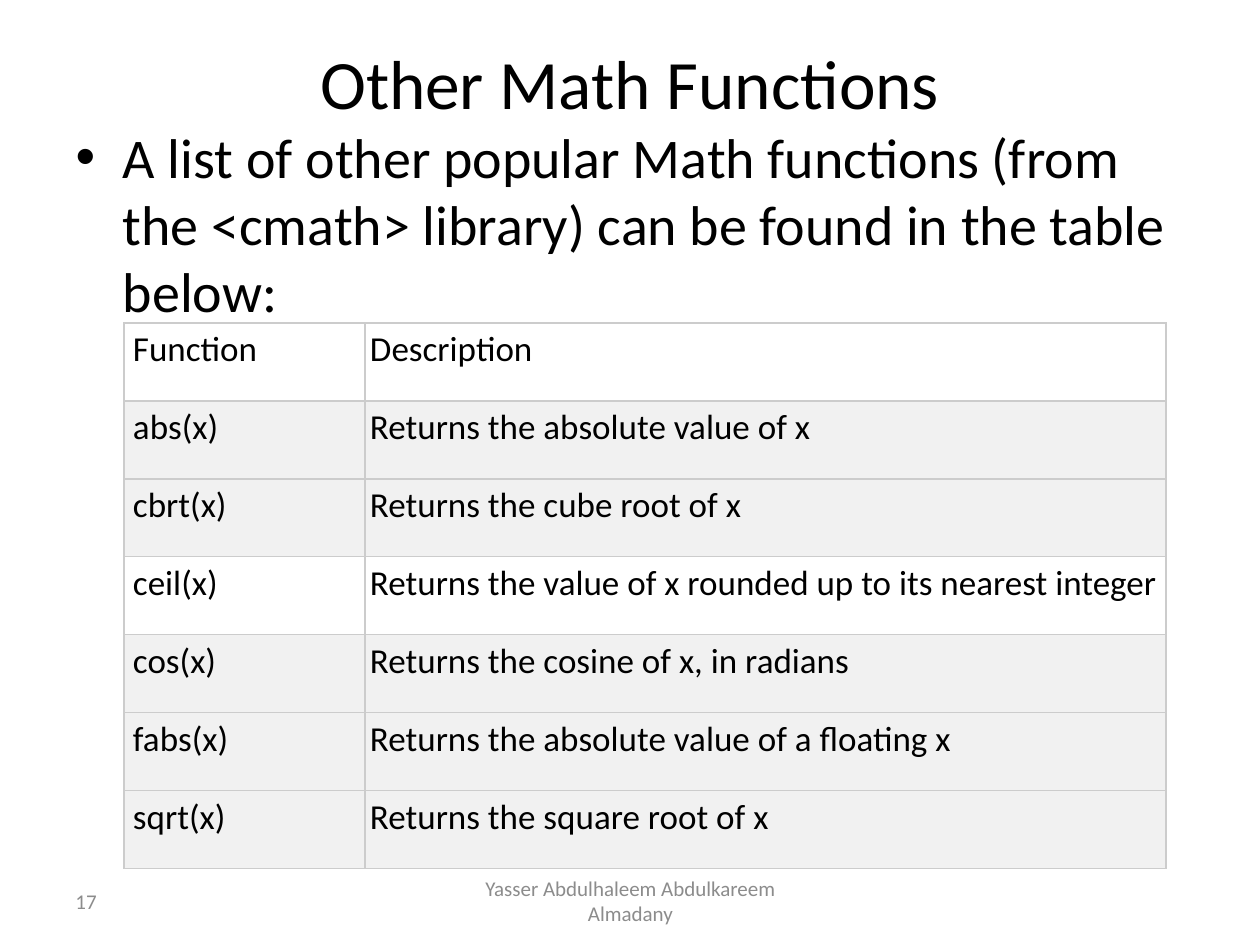
"""Build a slide listing other math functions in a table."""
from lxml import etree
from pptx import Presentation
from pptx import util as u
from pptx.dml.color import RGBColor
from pptx.enum import text
from pptx.oxml.ns import qn

TITLE = "Other Math Functions"
INTRO = ("A list of other popular Math functions (from the <cmath> library) "
         "can be found in the table below:")
AUTHOR = "Yasser Abdulhaleem Abdulkareem Almadany"
PAGE = "17"
ROWS = [
    ("Function", "Description"),
    ("abs(x)", "Returns the absolute value of x"),
    ("cbrt(x)", "Returns the cube root of x"),
    ("ceil(x)", "Returns the value of x rounded up to its nearest integer"),
    ("cos(x)", "Returns the cosine of x, in radians"),
    ("fabs(x)", "Returns the absolute value of a floating x"),
    ("sqrt(x)", "Returns the square root of x"),
]
WHITE_ROWS = (0, 3)
COLUMN_WIDTHS = (241, 801)
ROW_HEIGHT = 78
LEFT_MARGINS = (9, 5)
CELL_MARGIN = 5

FONT = "Calibri"
BLACK = RGBColor(0, 0, 0)
GRAY = RGBColor(0x8C, 0x8C, 0x8C)
WHITE = RGBColor(0xFF, 0xFF, 0xFF)
BAND = RGBColor(0xF1, 0xF1, 0xF1)
BORDER = RGBColor(0xCC, 0xCC, 0xCC)
LEFT, CENTER = text.PP_ALIGN.LEFT, text.PP_ALIGN.CENTER
TOP, MIDDLE = text.MSO_ANCHOR.TOP, text.MSO_ANCHOR.MIDDLE


def px(length):
    """Turn px into EMU."""
    return u.Emu(round(length * 914400 / 126))


def write(frame, words, size, color=BLACK, align=LEFT):
    """Write one formatted run into the first paragraph."""
    paragraph = frame.paragraphs[0]
    paragraph.alignment = align
    paragraph.space_before = u.Pt(0)
    run = paragraph.add_run()
    run.text = words
    run.font.name, run.font.size = FONT, u.Pt(size)
    run.font.color.rgb = color


def place(shape, box, anchor):
    """Move a text shape and return its prepared frame."""
    shape.left, shape.top, shape.width, shape.height = map(px, box)
    frame = shape.text_frame
    frame.word_wrap = True
    frame.auto_size = text.MSO_AUTO_SIZE.NONE
    frame.vertical_anchor = anchor
    return frame


def add_borders(cell):
    """Draw a thin line on each side of a cell."""
    properties = cell._tc.get_or_add_tcPr()
    for side in ("a:lnL", "a:lnR", "a:lnT", "a:lnB"):
        line = etree.SubElement(properties, qn(side), w=str(u.Pt(0.75)))
        fill = etree.SubElement(line, qn("a:solidFill"))
        etree.SubElement(fill, qn("a:srgbClr"), val=str(BORDER))


def add_function_table(slide):
    """Add the table of functions."""
    table = slide.shapes.add_table(
        len(ROWS), len(COLUMN_WIDTHS), px(124), px(323),
        px(sum(COLUMN_WIDTHS)), px(ROW_HEIGHT * len(ROWS))).table
    table.first_row = table.horz_banding = False
    for column, width in zip(table.columns, COLUMN_WIDTHS):
        column.width = px(width)
    for i, row in enumerate(ROWS):
        table.rows[i].height = px(ROW_HEIGHT)
        for j, words in enumerate(row):
            cell = table.cell(i, j)
            cell.margin_left = px(LEFT_MARGINS[j])
            cell.margin_right = cell.margin_top = cell.margin_bottom = px(CELL_MARGIN)
            add_borders(cell)
            cell.fill.solid()
            cell.fill.fore_color.rgb = WHITE if i in WHITE_ROWS else BAND
            write(cell.text_frame, words, 20)


def main():
    """Build and save the presentation."""
    presentation = Presentation()
    presentation.slide_width, presentation.slide_height = px(1260), px(945)
    slide = presentation.slides.add_slide(presentation.slide_layouts[1])
    title, body = slide.placeholders
    write(place(title, (63, 38, 1134, 87), MIDDLE), TITLE, 39.6, align=CENTER)
    write(place(body, (63, 116, 1134, 753), TOP), INTRO, 32)
    for words, box, align in ((AUTHOR, (431, 876, 399, 50), CENTER),
                              (PAGE, (63, 876, 294, 50), LEFT)):
        textbox = slide.shapes.add_textbox(*map(px, box))
        write(place(textbox, box, MIDDLE), words, 12, GRAY, align)
    add_function_table(slide)
    presentation.save("out.pptx")


if __name__ == "__main__":
    main()
